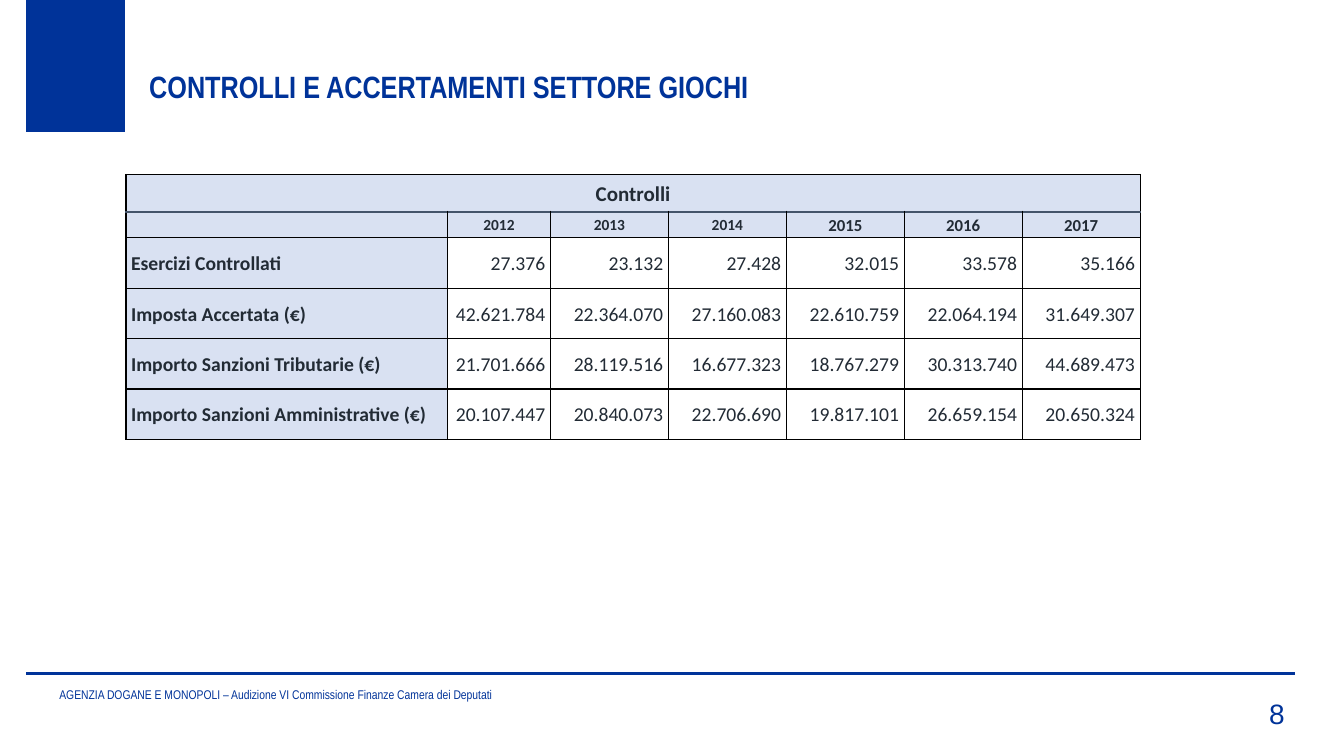
"""Build the slide on checks and assessments in the gaming sector."""
from lxml import etree
from pptx import Presentation
from pptx.dml.color import RGBColor
from pptx.enum.shapes import MSO_CONNECTOR, MSO_SHAPE
from pptx.enum.text import MSO_ANCHOR, MSO_AUTO_SIZE, PP_ALIGN
from pptx.oxml.ns import qn
from pptx.util import Pt

LEFT, CENTER, RIGHT = PP_ALIGN.LEFT, PP_ALIGN.CENTER, PP_ALIGN.RIGHT
MIDDLE, BOTTOM = MSO_ANCHOR.MIDDLE, MSO_ANCHOR.BOTTOM
NO_AUTOFIT = MSO_AUTO_SIZE.NONE
RECTANGLE, STRAIGHT = MSO_SHAPE.RECTANGLE, MSO_CONNECTOR.STRAIGHT
TITLE_ONLY = 5

BLUE, INK, PALE, SLATE, BLACK = "003399", "222B35", "D9E1F2", "44546A", "000000"
COLUMN_WIDTHS = [319, 102] + [117] * 5
ROW_HEIGHTS = [37, 26] + [50] * 4
YEARS = ["2012", "2013", "2014", "2015", "2016", "2017"]
CHECKS = [
    ["Esercizi Controllati",
     "27.376", "23.132", "27.428", "32.015", "33.578", "35.166"],
    ["Imposta Accertata (€)",
     "42.621.784", "22.364.070", "27.160.083", "22.610.759", "22.064.194", "31.649.307"],
    ["Importo Sanzioni Tributarie (€)",
     "21.701.666", "28.119.516", "16.677.323", "18.767.279", "30.313.740", "44.689.473"],
    ["Importo Sanzioni Amministrative (€)",
     "20.107.447", "20.840.073", "22.706.690", "19.817.101", "26.659.154", "20.650.324"],
]


def px(length):
    """Turn pixels, one hundred to the inch, into EMU."""
    return length * 9144


def colour(code):
    """Turn a hex string into a colour."""
    return RGBColor.from_string(code)


def write(frame, text, size, font, code, bold=False, align=LEFT):
    """Set one formatted paragraph in a text frame and return it."""
    frame.text = text
    para = frame.paragraphs[0]
    para.alignment = align
    for span in para.runs:
        span.font.size = Pt(size)
        span.font.name = font
        span.font.bold = bold
        span.font.color.rgb = colour(code)
    return para


def add_label(page, box, text, size, font, align, bottom_inset):
    """Add a bottom-anchored text box."""
    frame = page.shapes.add_textbox(*map(px, box)).text_frame
    frame.word_wrap = True
    frame.vertical_anchor = BOTTOM
    frame.margin_bottom = px(bottom_inset)
    write(frame, text, size, font, BLUE, align=align)


def add_header(page, box):
    """Place the blue block and the title in the header band."""
    left, top, width, height = box
    block = page.shapes.add_shape(RECTANGLE, px(left), px(top), px(98), px(height))
    block.shadow.inherit = False
    block.fill.solid()
    block.fill.fore_color.rgb = colour(BLUE)
    block.line.fill.background()
    title = page.shapes.title
    title.left, title.top = px(left + 112), px(top + 62)
    title.width, title.height = px(width - 112), px(47)
    frame = title.text_frame
    write(frame, "CONTROLLI E ACCERTAMENTI SETTORE GIOCHI", 22, "Arial Narrow", BLUE, True)
    frame.vertical_anchor = MIDDLE
    frame.word_wrap = True
    frame.auto_size = NO_AUTOFIT


def add_footer(page, box):
    """Place the rule, the footer text and the page number."""
    left, top, width, height = box
    rule = page.shapes.add_connector(STRAIGHT, px(left), px(top), px(left + width), px(top))
    rule.line.color.rgb = colour(BLUE)
    rule.line.width = Pt(2.25)
    etree.SubElement(rule._element.spPr, qn("a:effectLst"))
    add_label(page, (left + 23, top - 7, 945, 40),
              "AGENZIA DOGANE E MONOPOLI – Audizione VI Commissione Finanze Camera dei Deputati",
              9, "Arial Narrow", LEFT, 5)
    add_label(page, (left + width - 116, top + 3, 116, height - 3), "8", 20, "Arial", RIGHT, 1)


def add_border(cell, side, code, width):
    """Draw one side of a cell."""
    line = etree.SubElement(cell._tc.get_or_add_tcPr(), qn(f"a:ln{side}"), w=str(Pt(width)))
    fill = etree.SubElement(line, qn("a:solidFill"))
    etree.SubElement(fill, qn("a:srgbClr"), val=code)


def format_cell(cell, row, column, text):
    """Write and style one cell according to its row and column."""
    for side in "LRTB":
        under_heading = (row, side) in ((0, "B"), (1, "T"))
        add_border(cell, side, *((SLATE, 1.5) if under_heading else (BLACK, 1)))
    is_header = row < 2 or column == 0
    if is_header:
        cell.fill.solid()
        cell.fill.fore_color.rgb = colour(PALE)
    else:
        cell.fill.background()
    cell.vertical_anchor = MIDDLE
    cell.margin_left = cell.margin_right = px(5)
    cell.margin_top = cell.margin_bottom = px(1)
    year_size = 11 if column < 4 else 12
    size = {0: 15, 1: year_size}.get(row, 14)
    align = CENTER if row < 2 else LEFT if column == 0 else RIGHT
    para = write(cell.text_frame, text, size, "Calibri", INK, is_header, align)
    para.line_spacing = 1.07
    if not text:
        etree.SubElement(para._p, qn("a:endParaRPr"), sz=str(size * 100))


def add_checks_table(page, box):
    """Place the table of yearly checks."""
    rows = [["Controlli"] + [""] * len(YEARS), [""] + YEARS] + CHECKS
    table = page.shapes.add_table(len(rows), len(COLUMN_WIDTHS), *map(px, box)).table
    table.first_row = table.horz_banding = False
    for column, width in zip(table.columns, COLUMN_WIDTHS):
        column.width = px(width)
    for row, height in zip(table.rows, ROW_HEIGHTS):
        row.height = px(height)
    for row, texts in enumerate(rows):
        for column, text in enumerate(texts):
            format_cell(table.cell(row, column), row, column, text)
    table.cell(0, 0).merge(table.cell(0, len(YEARS)))


def main():
    """Build and save the deck."""
    deck = Presentation()
    deck.slide_width, deck.slide_height = px(1333), px(750)
    page = deck.slides.add_slide(deck.slide_layouts[TITLE_ONLY])
    add_header(page, (26, 0, 1286, 131))
    add_footer(page, (26, 668, 1258, 57))
    add_checks_table(page, (125, 173, sum(COLUMN_WIDTHS), sum(ROW_HEIGHTS)))
    deck.save("out.pptx")


if __name__ == "__main__":
    main()
